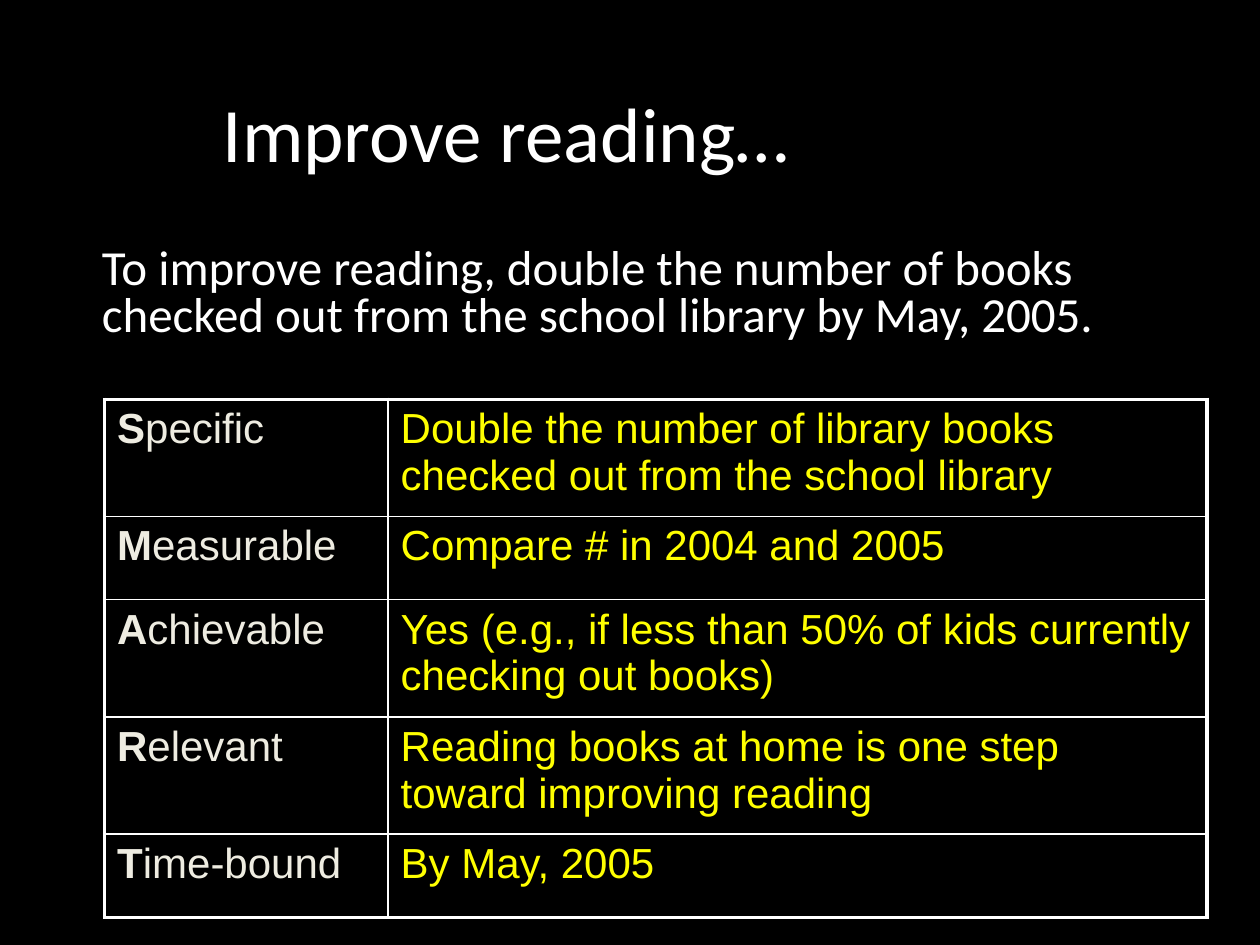
"""Build the reading goal slide with its SMART table."""
from lxml.etree import SubElement
from pptx import Presentation
from pptx.dml.color import RGBColor
from pptx.enum.text import MSO_ANCHOR
from pptx.oxml.ns import qn
from pptx.util import Inches, Pt

BLACK = RGBColor(0, 0, 0)
WHITE = RGBColor(255, 255, 255)
CREAM = RGBColor(0xEE, 0xEC, 0xE1)
YELLOW = RGBColor(255, 255, 0)

TITLE = "Improve reading…"
GOAL = ("To improve reading, double the number of books "
        "checked out from the school library by May, 2005.")
ROWS = [
    ("Specific", "Double the number of library books checked out from the school library", 0.93),
    ("Measurable", "Compare # in 2004 and 2005", 0.66),
    ("Achievable", "Yes (e.g., if less than 50% of kids currently checking out books)", 0.93),
    ("Relevant", "Reading books at home is one step toward improving reading", 0.93),
    ("Time-bound", "By May, 2005", 0.66),
]
COLS = [2.25, 6.5]
THIN, THICK = 1, 2.25


def style(run, size, font, color, bold=False):
    run.font.size = Pt(size)
    run.font.name = font
    run.font.color.rgb = color
    run.font.bold = bold


def add_text(slide, text, area, size):
    frame = slide.shapes.add_textbox(*map(Inches, area)).text_frame
    frame.word_wrap = True
    frame.text = text
    style(frame.paragraphs[0].runs[0], size, "Calibri", WHITE)
    return frame


def add_edge(cell, side, width):
    line = SubElement(cell._tc.get_or_add_tcPr(), qn(f"a:ln{side}"), w=str(Pt(width)))
    fill = SubElement(line, qn("a:solidFill"))
    SubElement(fill, qn("a:srgbClr"), val=str(WHITE))


def fill_cell(cell, parts, edges):
    for side, outer in edges.items():
        add_edge(cell, side, THICK if outer else THIN)
    cell.fill.solid()
    cell.fill.fore_color.rgb = BLACK
    para = cell.text_frame.paragraphs[0]
    for text, color, bold in parts:
        run = para.add_run()
        run.text = text
        style(run, 24, "Arial", color, bold)


def add_grid(slide):
    tall = sum(row[2] for row in ROWS)
    area = map(Inches, (0.83, 3.17, sum(COLS), tall))
    table = slide.shapes.add_table(len(ROWS), len(COLS), *area).table
    table.first_row = table.horz_banding = False
    for col, width in zip(table.columns, COLS):
        col.width = Inches(width)
    for r, (term, note, height) in enumerate(ROWS):
        table.rows[r].height = Inches(height)
        texts = [[(term[0], CREAM, True), (term[1:], CREAM, False)],
                 [(note, YELLOW, False)]]
        for c, parts in enumerate(texts):
            edges = {"L": c == 0, "R": c == len(COLS) - 1,
                     "T": r == 0, "B": r == len(ROWS) - 1}
            fill_cell(table.cell(r, c), parts, edges)


def main():
    deck = Presentation()
    deck.slide_width, deck.slide_height = Inches(10), Inches(7.5)
    slide = deck.slides.add_slide(deck.slide_layouts[6])
    slide.background.fill.solid()
    slide.background.fill.fore_color.rgb = BLACK
    title = add_text(slide, TITLE, (1.67, 0.21, 7.67, 1.67), 44)
    title.vertical_anchor = MSO_ANCHOR.MIDDLE
    goal = add_text(slide, GOAL, (0.33, 1.92, 9.33, 1.17), 28)
    goal.margin_left = Inches(0.48)
    goal.paragraphs[0].line_spacing = 0.8
    add_grid(slide)
    deck.save("out.pptx")


if __name__ == "__main__":
    main()
